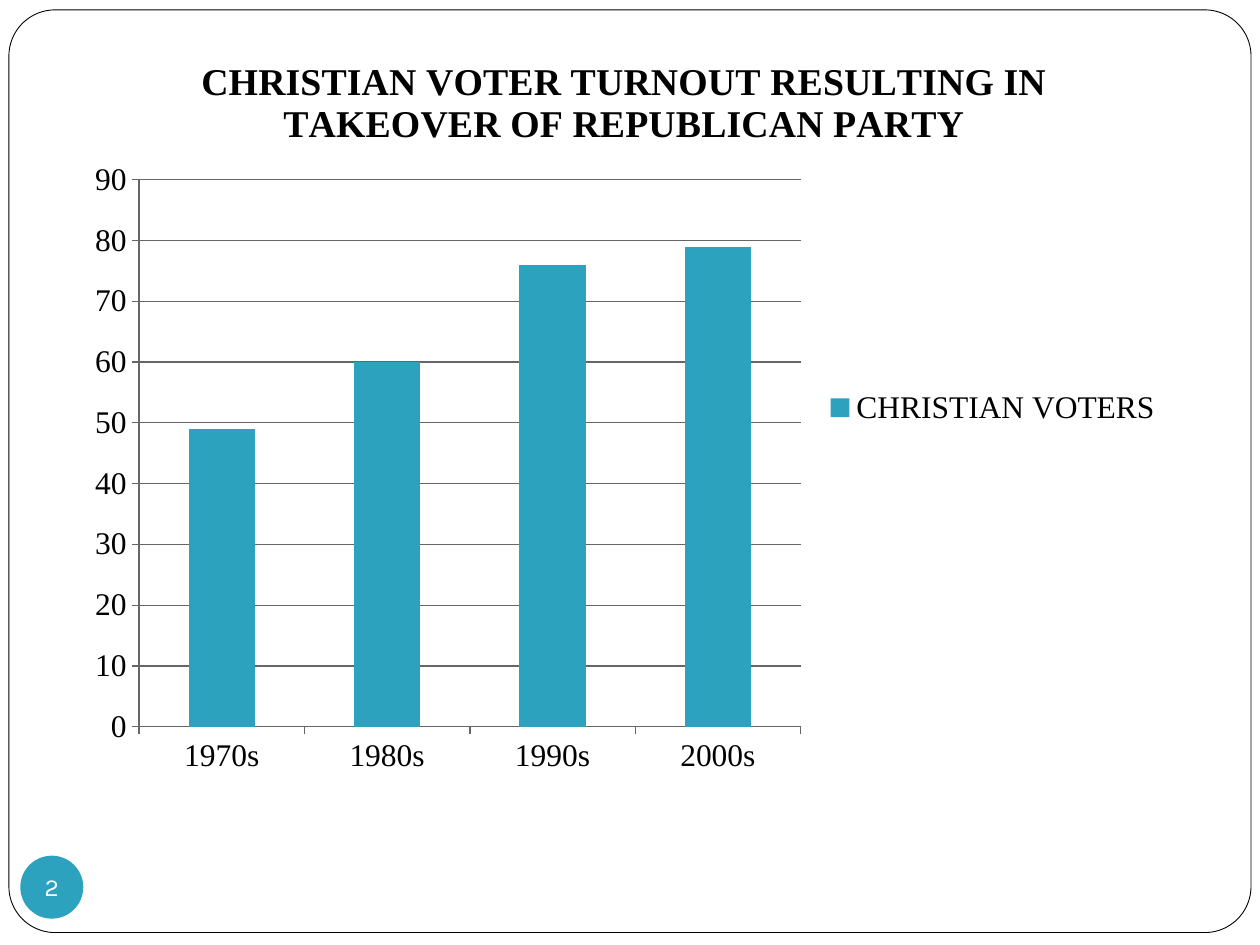
from dataclasses import dataclass

from lxml import etree
from pptx import Presentation
from pptx import util as u
from pptx.chart import data as chart_data
from pptx.dml.color import RGBColor
from pptx.enum import chart as charts, shapes, text
from pptx.oxml import ns


@dataclass(frozen=True)
class Theme:
    """Colours, fonts and type sizes of the deck."""
    ink: RGBColor = RGBColor(0, 0, 0)
    paper: RGBColor = RGBColor(255, 255, 255)
    accent: RGBColor = RGBColor(0x2D, 0xA2, 0xBF)
    rule: RGBColor = RGBColor(0x66, 0x66, 0x66)
    chart_font: str = "Times New Roman"
    badge_font: str = "Karla"
    title_size: float = 21.6
    label_size: float = 18
    badge_size: float = 14


THEME = Theme()


def set_font(font, name, size, colour, bold=False):
    """Apply name, size, colour and weight to a font."""
    font.name, font.size, font.bold = name, u.Pt(size), bold
    font.color.rgb = colour


def add_panel(page, kind, box, fill):
    """Add a filled preset shape without shadow or outline."""
    panel = page.shapes.add_shape(kind, *map(u.Cm, box))
    panel.shadow.inherit = False
    panel.fill.solid()
    panel.fill.fore_color.rgb = fill
    panel.line.fill.background()
    return panel


def add_frame(page, box):
    """Draw the rounded border of the page."""
    frame = add_panel(page, shapes.MSO_SHAPE.ROUNDED_RECTANGLE, box, THEME.paper)
    frame.adjustments[0] = 0.05
    frame.line.color.rgb = THEME.ink
    frame.line.width = u.Pt(0.5)


def place_plot(chart, **fractions):
    """Fix the inner plot area as fractions of the chart."""
    area = chart.plots[0]._element.getparent()
    for old in area.findall(ns.qn("c:layout")):
        area.remove(old)
    layout = etree.Element(ns.qn("c:layout"))
    manual = etree.SubElement(layout, ns.qn("c:manualLayout"))
    settings = {"layoutTarget": "inner", "xMode": "edge", "yMode": "edge", **fractions}
    for tag, value in settings.items():
        etree.SubElement(manual, ns.qn(f"c:{tag}")).set("val", str(value))
    area.insert(0, layout)


def add_turnout_chart(page, box):
    """Draw the column chart of voters by decade."""
    turnout = chart_data.CategoryChartData()
    turnout.categories = ["1970s", "1980s", "1990s", "2000s"]
    turnout.add_series("CHRISTIAN VOTERS", [49, 60, 76, 79])
    chart = page.shapes.add_chart(
        charts.XL_CHART_TYPE.COLUMN_CLUSTERED, *map(u.Cm, box), turnout).chart
    set_font(chart.font, THEME.chart_font, THEME.label_size, THEME.ink)

    chart.has_title = True
    title = chart.chart_title
    title.include_in_layout = False
    title.text_frame.text = "CHRISTIAN VOTER TURNOUT RESULTING IN TAKEOVER OF REPUBLICAN PARTY"
    set_font(title.text_frame.paragraphs[0].runs[0].font,
             THEME.chart_font, THEME.title_size, THEME.ink, True)

    chart.has_legend = True
    chart.legend.position = charts.XL_LEGEND_POSITION.RIGHT
    chart.legend.include_in_layout = False

    plot = chart.plots[0]
    plot.gap_width = 150
    plot.vary_by_categories = False
    bars = plot.series[0].format.fill
    bars.solid()
    bars.fore_color.rgb = THEME.accent

    values = chart.value_axis
    values.minimum_scale, values.maximum_scale, values.major_unit = 0, 90, 10
    values.has_major_gridlines = True
    for axis in (chart.category_axis, values):
        axis.major_tick_mark = charts.XL_TICK_MARK.OUTSIDE
    for ruled in (chart.category_axis, values, values.major_gridlines):
        ruled.format.line.color.rgb = THEME.rule
        ruled.format.line.width = u.Pt(0.75)
    place_plot(chart, x=0.06, y=0.2, w=0.6, h=0.72)


def add_page_badge(page, box, number):
    """Draw the round page number."""
    badge = add_panel(page, shapes.MSO_SHAPE.OVAL, box, THEME.accent)
    frame = badge.text_frame
    frame.margin_left = frame.margin_right = frame.margin_top = frame.margin_bottom = 0
    frame.word_wrap = False
    frame.vertical_anchor = text.MSO_ANCHOR.MIDDLE
    frame.text = str(number)
    para = frame.paragraphs[0]
    para.alignment = text.PP_ALIGN.CENTER
    set_font(para.runs[0].font, THEME.badge_font, THEME.badge_size, THEME.paper)


def main():
    """Build and save the deck."""
    deck = Presentation()
    deck.slide_width, deck.slide_height = u.Cm(25.4), u.Cm(19.05)
    page = deck.slides.add_slide(deck.slide_layouts[6])
    add_frame(page, (0.18, 0.2, 25.04, 18.6))
    add_turnout_chart(page, (1.47, 0.56, 22.23, 15.32))
    add_page_badge(page, (0.41, 17.25, 1.27, 1.27), 2)
    deck.save("out.pptx")


if __name__ == "__main__":
    main()
